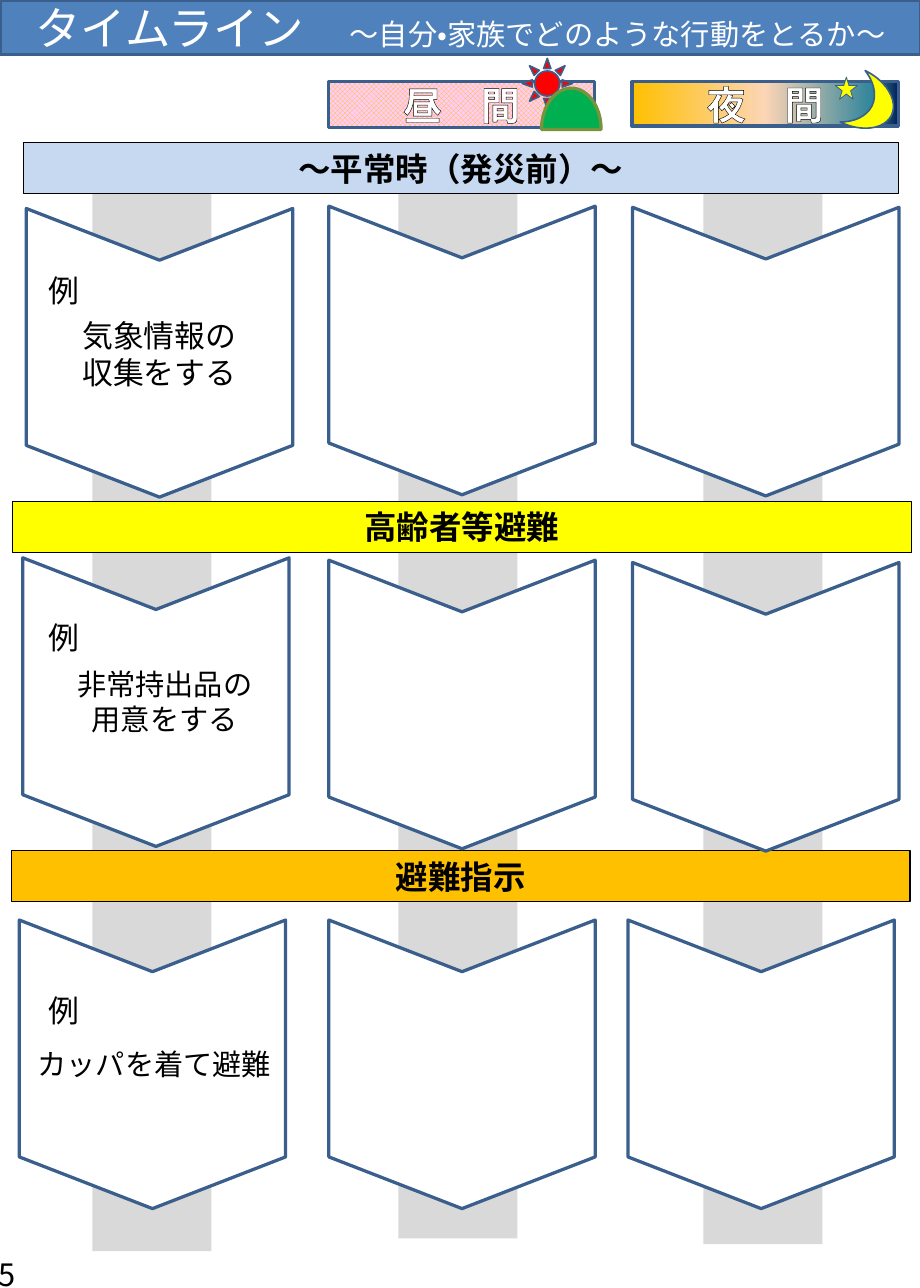
from lxml import etree
from pptx import Presentation
from pptx.dml.color import RGBColor
from pptx.enum.dml import MSO_PATTERN
from pptx.enum.lang import MSO_LANGUAGE_ID
from pptx.enum.shapes import MSO_SHAPE
from pptx.enum.text import MSO_ANCHOR, MSO_AUTO_SIZE, PP_ALIGN
from pptx.oxml.ns import qn
from pptx.util import Inches, Pt

WHITE = RGBColor(0xFF, 0xFF, 0xFF)
BLACK = RGBColor(0, 0, 0)
GRAY = RGBColor(0xD9, 0xD9, 0xD9)
BLUE = RGBColor(0x4F, 0x81, 0xBD)
BORDER = RGBColor(0x3A, 0x5F, 0x8C)
PALE_BLUE = RGBColor(0xC6, 0xD9, 0xF1)
YELLOW = RGBColor(0xFF, 0xFF, 0)
ORANGE = RGBColor(0xFF, 0xC0, 0)
PINK = RGBColor(0xFF, 0xCC, 0xFF)
RED = RGBColor(0xFF, 0, 0)
GREEN = RGBColor(0, 0xB0, 0x50)
OLIVE = RGBColor(0x77, 0x93, 0x3C)
NIGHT_STOPS = [
    (0, RGBColor(0, 0x20, 0x60)),
    (5, RGBColor(0x21, 0x59, 0x68)),
    (10, RGBColor(0x31, 0x85, 0x9C)),
    (50, RGBColor(0xFC, 0xD5, 0xB5)),
    (100, ORANGE),
]

STRIPES = [(3.41, 1.4), (6.02, 1.45), (0.79, 1.51)]
# label, fill, left, top, width
STAGES = [
    ("～平常時（発災前）～", PALE_BLUE, 0.2, 1.22, 7.49),
    ("高齢者等避難", YELLOW, 0.11, 4.29, 7.69),
    ("避難指示", ORANGE, 0.1, 7.28, 7.69),
]
ACTION_CELLS = [
    [(0.13, 1.88), (2.72, 1.86), (5.32, 1.87)],
    [(0.1, 4.87), (2.72, 4.89), (5.32, 4.91)],
    [(0.07, 7.97), (2.72, 7.97), (5.28, 7.97)],
]
# top of the "例" mark, place of the example, lines, size, font
EXAMPLES = [
    (2.28, (0.5, 2.66, 1.73, 0.74), ["気象情報の", "収集をする"], 19, "Calibri"),
    (5.25, (0.15, 5.65, 2.52, 0.71), ["非常持出品の", "用意をする"], 18, "Arial"),
    (8.44, (0.06, 8.91, 2.52, 0.4), ["カッパを着て避難"], 18, "Arial"),
]


class TimelineSlide:
    def __init__(self, slide, font="Calibri"):
        self.slide = slide
        self.font = font

    def shape(self, kind, place, fill=None, line=None, weight=2, rotation=0,
              adjustments=(), group=None):
        owner = group or self.slide
        part = owner.shapes.add_shape(kind, *map(Inches, place))
        part.shadow.inherit = False
        part.rotation = rotation
        for index, value in enumerate(adjustments):
            part.adjustments[index] = value
        if fill is not None:
            part.fill.solid()
            part.fill.fore_color.rgb = fill
        if line is None:
            part.line.fill.background()
        else:
            part.line.color.rgb = line
            part.line.width = Pt(weight)
        return part

    def group(self):
        return self.slide.shapes.add_group_shape()

    def run(self, paragraph, words, size, color=BLACK, bold=False, font=None, outline=None):
        run = paragraph.add_run()
        run.text = words
        run.font.language_id = MSO_LANGUAGE_ID.JAPANESE
        run.font.name = font or self.font
        run.font.size = Pt(size)
        run.font.bold = bold
        run.font.color.rgb = color
        if outline:
            self.outline(run, *outline)

    def outline(self, run, color, weight):
        border = etree.Element(qn("a:ln"), w=str(Pt(weight)))
        fill = etree.SubElement(border, qn("a:solidFill"))
        etree.SubElement(fill, qn("a:srgbClr"), val=str(color))
        run.font._element.insert(0, border)

    def label(self, part, words, size, **style):
        """Centre one line of text in a shape."""
        part.text_frame.vertical_anchor = MSO_ANCHOR.MIDDLE
        paragraph = part.text_frame.paragraphs[0]
        paragraph.alignment = PP_ALIGN.CENTER
        self.run(paragraph, words, size, **style)
        return paragraph

    def text(self, place, lines, size, align=PP_ALIGN.LEFT, font=None, wrap=True):
        frame = self.slide.shapes.add_textbox(*map(Inches, place)).text_frame
        frame.word_wrap = wrap
        frame.auto_size = MSO_AUTO_SIZE.SHAPE_TO_FIT_TEXT
        for index, words in enumerate(lines):
            paragraph = frame.add_paragraph() if index else frame.paragraphs[0]
            paragraph.alignment = align
            self.run(paragraph, words, size, font=font)

    def title(self, heading, subtitle):
        banner = self.shape(MSO_SHAPE.RECTANGLE, (0, 0, 7.88, 0.47), BLUE, BORDER)
        paragraph = self.label(banner, heading, 28, color=WHITE)
        self.run(paragraph, subtitle, 18, WHITE)

    def stage_bar(self, words, fill, left, top, width):
        bar = self.shape(MSO_SHAPE.RECTANGLE, (left, top, width, 0.44), fill, BLACK, 0.75)
        bar.text_frame.auto_size = MSO_AUTO_SIZE.SHAPE_TO_FIT_TEXT
        self.label(bar, words, 20, bold=True, outline=(WHITE, 0.25))

    def action_cell(self, left, top):
        self.shape(MSO_SHAPE.CHEVRON, (left, top, 2.47, 2.28), WHITE, BORDER,
                   rotation=90, adjustments=[0.194])

    def time_header(self, words, left, height):
        header = self.shape(MSO_SHAPE.RECTANGLE, (left, 0.7, 2.28, height), line=BORDER)
        self.label(header, words, 24, color=WHITE, bold=True, outline=(BLACK, 0.75))
        return header.fill

    def day_header(self):
        fill = self.time_header("昼　間", 2.81, 0.39)
        fill.patterned()
        fill.pattern = MSO_PATTERN.TRELLIS
        fill.fore_color.rgb = ORANGE
        fill.back_color.rgb = PINK
        scene = self.group()
        self.shape(MSO_SHAPE.SUN, (4.47, 0.5, 0.43, 0.43), RED, BORDER, 1, group=scene)
        self.shape(MSO_SHAPE.CHORD, (4.54, 0.85, 0.7, 0.51), GREEN, OLIVE,
                   rotation=90, adjustments=[53.47, 162.42], group=scene)

    def night_header(self):
        fill = self.time_header("夜　間", 5.41, 0.38)
        fill.gradient()
        fill.gradient_angle = 180
        stop_list = fill.gradient_stops[0]._gs.getparent()
        for stop in list(stop_list):
            stop_list.remove(stop)
        for percent, color in NIGHT_STOPS:
            stop = etree.SubElement(stop_list, qn("a:gs"), pos=str(percent * 1000))
            etree.SubElement(stop, qn("a:srgbClr"), val=str(color))
        scene = self.group()
        moon = self.shape(MSO_SHAPE.MOON, (7.28, 0.66, 0.37, 0.49), YELLOW, BORDER, 1,
                          rotation=25.9, group=scene)
        moon._element.spPr.find(qn("a:xfrm")).set("flipH", "1")
        self.shape(MSO_SHAPE.STAR_5_POINT, (7.15, 0.66, 0.19, 0.19), YELLOW, BORDER, 0.5,
                   group=scene)


def main():
    deck = Presentation()
    deck.slide_width, deck.slide_height = Inches(7.875), Inches(11.024)
    timeline = TimelineSlide(deck.slides.add_slide(deck.slide_layouts[6]))

    for left, top in STRIPES:
        timeline.shape(MSO_SHAPE.RECTANGLE, (left, top, 1.02, 9.2), GRAY)
    timeline.title("タイムライン　", "～自分・家族でどのような行動をとるか～")
    for stage in STAGES:
        timeline.stage_bar(*stage)
    for cells in ACTION_CELLS:
        for left, top in cells:
            timeline.action_cell(left, top)
    for mark_top, place, lines, size, font in EXAMPLES:
        timeline.text((0.32, mark_top, 0.55, 0.42), ["例"], 19)
        timeline.text(place, lines, size, PP_ALIGN.CENTER, font)
    timeline.day_header()
    timeline.night_header()
    timeline.text((-0.11, 10.7, 0.34, 0.42), ["5"], 19, font="Noto Sans CJK TC", wrap=False)
    deck.save("out.pptx")


if __name__ == "__main__":
    main()
